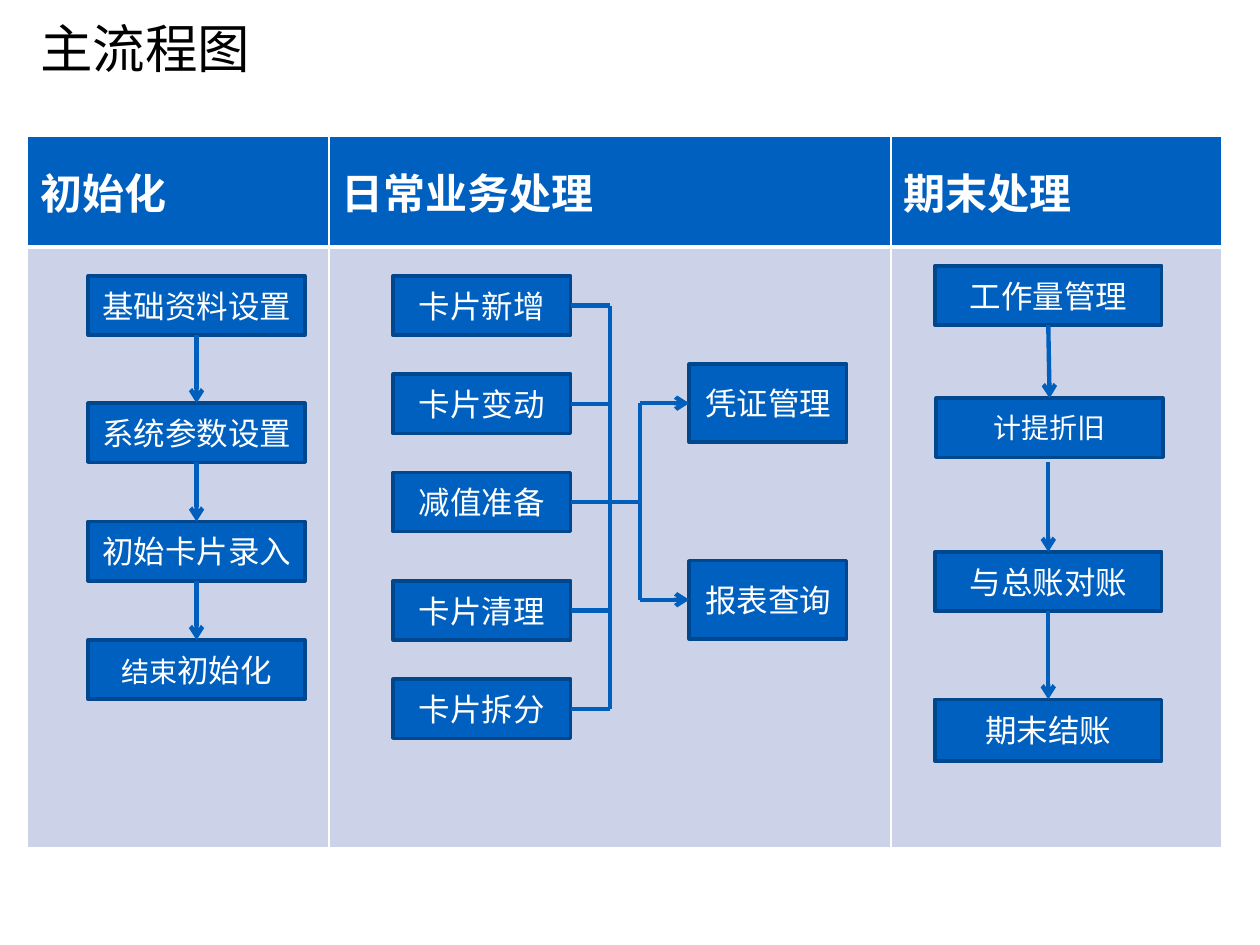
"""Build the main process flow slide of a fixed asset system."""
from lxml import etree
from pptx import Presentation
from pptx.dml.color import RGBColor
from pptx.enum.shapes import MSO_CONNECTOR, MSO_SHAPE
from pptx.enum.text import MSO_ANCHOR, PP_ALIGN
from pptx.oxml.ns import qn
from pptx.util import Inches, Pt

RECT = MSO_SHAPE.RECTANGLE
LINE = MSO_CONNECTOR.STRAIGHT
MIDDLE = MSO_ANCHOR.MIDDLE
CENTER = PP_ALIGN.CENTER
TOP, LEFT, BOTTOM, RIGHT = range(4)
SANS, LATIN = "Noto Sans CJK SC", "Calibri"
COLORS = {"fill": "0060C0", "edge": "00478E", "line": "005EBC",
          "body": "CCD2E8", "white": "FFFFFF", "black": "000000"}
HEADS = ["初始化", "日常业务处理", "期末处理"]
WIDTHS = [2.39, 4.46, 2.63]
HEIGHTS = [0.88, 4.77]
SETUP = [(2.19, [("基础资料设置", 18)]), (3.2, [("系统参数设置", 18)]),
         (4.14, [("初始卡片录入", 18)]),
         (5.08, [("结束", 16), ("初始化", 18)])]
CARDS = [(2.19, "卡片新增"), (2.97, "卡片变动"), (3.75, "减值准备"),
         (4.61, "卡片清理"), (5.39, "卡片拆分")]
OUTPUT = [(2.89, "凭证管理"), (4.45, "报表查询")]
CLOSING = [(7.42, 2.11, 0.47, "工作量管理", 18),
           (7.43, 3.16, 0.47, "计提折旧", 16),
           (7.42, 4.38, 0.47, "与总账对账", 18),
           (7.42, 5.55, 0.49, "期末结账", 18)]
BUS, FORK = 4.84, 5.08


def paint(name):
    """Return the named colour."""
    return RGBColor.from_string(COLORS[name])


def style(para, size, face, color, bold=False):
    """Set the font of a paragraph."""
    font = para.font
    font.size, font.name, font.bold = Pt(size), face, bold
    font.color.rgb = paint(color)


def add_title(slide, text):
    """Add the slide title."""
    shape = slide.shapes.add_textbox(Inches(0.22), 0, Inches(7.91), Inches(0.76))
    frame = shape.text_frame
    frame.word_wrap = True
    frame.vertical_anchor = MIDDLE
    frame.text = text
    style(frame.paragraphs[0], 30, SANS, "black")


def set_edges(cell, top, bottom):
    """Give a cell white borders with the given top and bottom widths."""
    props = cell._tc.get_or_add_tcPr()
    for tag, width in zip(("lnL", "lnR", "lnT", "lnB"), (1, 1, top, bottom)):
        edge = etree.SubElement(props, qn(f"a:{tag}"), w=str(Pt(width)))
        fill = etree.SubElement(edge, qn("a:solidFill"))
        etree.SubElement(fill, qn("a:srgbClr"), val=COLORS["white"])


def add_grid(slide):
    """Add the table with one column per phase."""
    table = slide.shapes.add_table(
        2, 3, Inches(0.22), Inches(1.08),
        Inches(sum(WIDTHS)), Inches(sum(HEIGHTS))).table
    for row, height in zip(table.rows, HEIGHTS):
        row.height = Inches(height)
    for i, (head, width) in enumerate(zip(HEADS, WIDTHS)):
        table.columns[i].width = Inches(width)
        top, body = table.cell(0, i), table.cell(1, i)
        set_edges(top, 1, 3)
        set_edges(body, 3, 1)
        for cell, color in ((top, "fill"), (body, "body")):
            cell.fill.solid()
            cell.fill.fore_color.rgb = paint(color)
        top.text = head
        top.vertical_anchor = MIDDLE
        style(top.text_frame.paragraphs[0], 24, SANS, "white", True)


def add_box(slide, x, y, w, h, parts):
    """Add a process box whose text is a list of (text, size) parts."""
    box = slide.shapes.add_shape(RECT, Inches(x), Inches(y), Inches(w), Inches(h))
    box.shadow.inherit = False
    box.fill.solid()
    box.fill.fore_color.rgb = paint("fill")
    box.line.color.rgb = paint("edge")
    box.line.width = Pt(2)
    frame = box.text_frame
    frame.margin_left = frame.margin_right = Inches(0.05)
    frame.vertical_anchor = MIDDLE
    para = frame.paragraphs[0]
    para.alignment = CENTER
    style(para, parts[0][1], LATIN, "white")
    for text, size in parts:
        run = para.add_run()
        run.text = text
        if len(parts) > 1:
            run.font.size = Pt(size)
    return box


def add_line(slide, start, end, arrow=False):
    """Join two ends, each a point or a pair of box and side."""
    spots = [(0, 0) if hasattr(a, "shape_id") else (Inches(a), Inches(b))
             for a, b in (start, end)]
    line = slide.shapes.add_connector(LINE, *spots[0], *spots[1])
    for spot, join in ((start, line.begin_connect), (end, line.end_connect)):
        if hasattr(spot[0], "shape_id"):
            join(*spot)
    line.line.color.rgb = paint("line")
    line.line.width = Pt(2.5)
    if arrow:
        etree.SubElement(line.line._get_or_add_ln(), qn("a:tailEnd"), type="arrow")
    etree.SubElement(line._element.spPr, qn("a:effectLst"))


def add_setup(slide):
    """Add the chain of setup steps."""
    boxes = [add_box(slide, 0.7, y, 1.72, 0.47, parts) for y, parts in SETUP]
    for upper, lower in zip(boxes, boxes[1:]):
        add_line(slide, (upper, BOTTOM), (lower, TOP), True)


def add_daily(slide):
    """Add the card tasks that feed vouchers and reports."""
    mids = [y + 0.235 for y, _ in CARDS]
    for mid, (y, text) in zip(mids, CARDS):
        box = add_box(slide, 3.12, y, 1.41, 0.47, [(text, 18)])
        add_line(slide, (box, RIGHT), (BUS, mid))
    add_line(slide, (BUS, mids[0]), (BUS, mids[-1]))
    add_line(slide, (BUS, mids[2]), (FORK, mids[2]))
    ends = [y + 0.31 for y, _ in OUTPUT]
    add_line(slide, (FORK, ends[0]), (FORK, ends[1]))
    for end, (y, text) in zip(ends, OUTPUT):
        box = add_box(slide, 5.47, y, 1.25, 0.62, [(text, 18)])
        add_line(slide, (FORK, end), (box, LEFT), True)


def add_closing(slide):
    """Add the chain of period-end steps."""
    boxes = [add_box(slide, x, y, 1.8, h, [(text, size)])
             for x, y, h, text, size in CLOSING]
    starts = [(boxes[0], BOTTOM), (8.32, 3.67), (boxes[2], BOTTOM)]
    for start, box in zip(starts, boxes[1:]):
        add_line(slide, start, (box, TOP), True)


def main():
    """Build and save the slide."""
    deck = Presentation()
    deck.slide_width, deck.slide_height = Inches(10), Inches(7.5)
    slide = deck.slides.add_slide(deck.slide_layouts[6])
    add_grid(slide)
    add_title(slide, "主流程图")
    add_setup(slide)
    add_daily(slide)
    add_closing(slide)
    deck.save("out.pptx")


if __name__ == "__main__":
    main()
